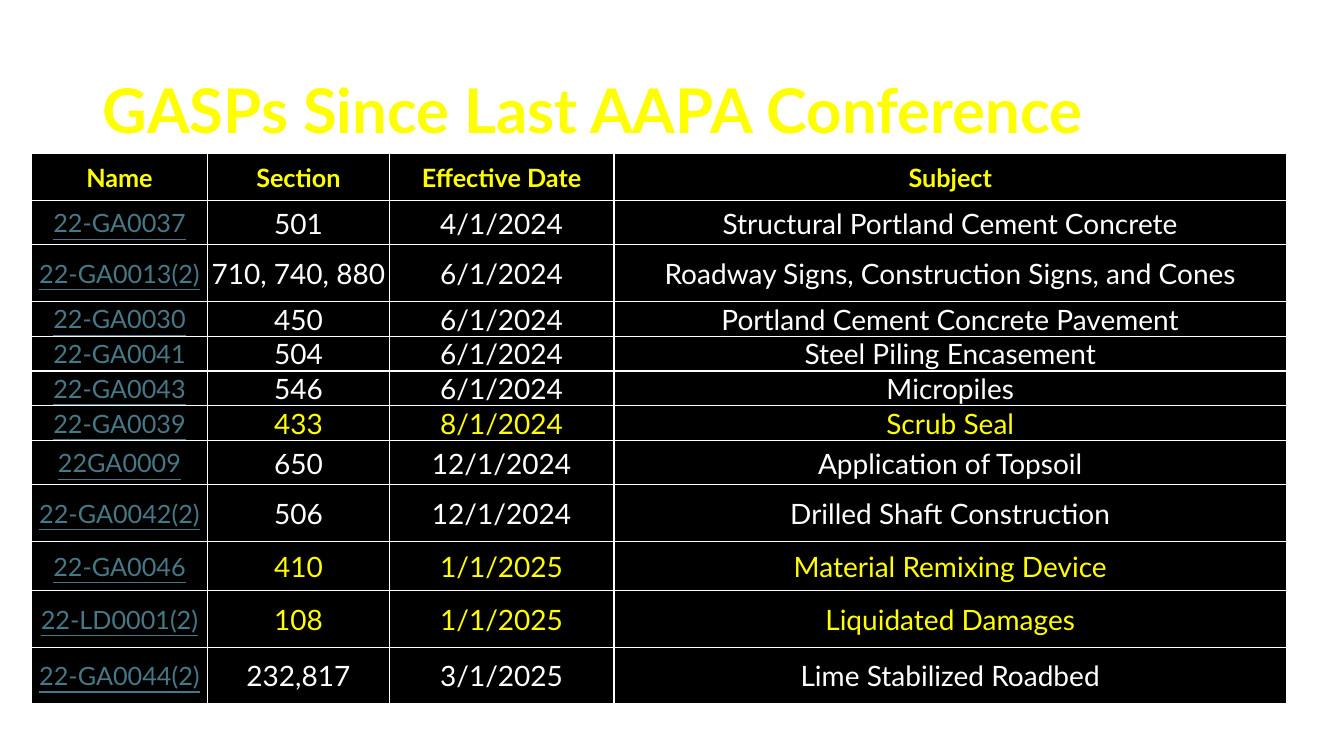
import pptx
import pptx.dml.color
import pptx.enum.text
import pptx.oxml
import pptx.oxml.ns
import pptx.util

RGBColor = pptx.dml.color.RGBColor
YELLOW = RGBColor(0xFF, 0xFF, 0x00)
WHITE = RGBColor(0xFF, 0xFF, 0xFF)
BLACK = RGBColor(0x00, 0x00, 0x00)
LINK_BLUE = RGBColor(0x46, 0x78, 0x86)

FONT = "Lato"
TITLE = "GASPs Since Last AAPA Conference"
HEADINGS = ("Name", "Section", "Effective Date", "Subject")
PROVISIONS = [
    ("22-GA0037", "501", "4/1/2024", "Structural Portland Cement Concrete"),
    ("22-GA0013(2)", "710, 740, 880", "6/1/2024", "Roadway Signs, Construction Signs, and Cones"),
    ("22-GA0030", "450", "6/1/2024", "Portland Cement Concrete Pavement"),
    ("22-GA0041", "504", "6/1/2024", "Steel Piling Encasement"),
    ("22-GA0043", "546", "6/1/2024", "Micropiles"),
    ("22-GA0039", "433", "8/1/2024", "Scrub Seal"),
    ("22GA0009", "650", "12/1/2024", "Application of Topsoil"),
    ("22-GA0042(2)", "506", "12/1/2024", "Drilled Shaft Construction"),
    ("22-GA0046", "410", "1/1/2025", "Material Remixing Device"),
    ("22-LD0001(2)", "108", "1/1/2025", "Liquidated Damages"),
    ("22-GA0044(2)", "232,817", "3/1/2025", "Lime Stabilized Roadbed"),
]
HIGHLIGHTED = {"22-GA0039", "22-GA0046", "22-LD0001(2)"}

# Lengths in px, 100 to the inch
PX = 9144
SLIDE_SIZE = (1333, 750)
TITLE_BOX = (92, 40, 1150, 145)
TABLE_CORNER = (31, 152)
COLUMN_WIDTHS = (175, 180, 223, 667)
ROW_HEIGHTS = (47, 44, 56, 34, 34, 34, 34, 44, 56, 49, 56, 56)


def px(length):
    return pptx.util.Emu(length * PX)


def add_run(para, text, size, color, bold=False, underline=False):
    span = para.add_run()
    span.text = text
    span.font.name = FONT
    span.font.size = pptx.util.Pt(size)
    span.font.color.rgb = color
    span.font.bold = bold
    span.font.underline = underline


def add_borders(cell):
    """Draw a 1 pt white line on all four sides; call before filling the cell."""
    properties = cell._tc.get_or_add_tcPr()
    for side in ("lnL", "lnR", "lnT", "lnB"):
        properties.append(pptx.oxml.parse_xml(
            f'<a:{side} {pptx.oxml.ns.nsdecls("a")} w="{pptx.util.Pt(1)}">'
            f'<a:solidFill><a:srgbClr val="{WHITE}"/></a:solidFill></a:{side}>'))


def text_style(row, column, name):
    if row == 0:
        return {"size": 18, "color": YELLOW, "bold": True}
    if column == 0:
        return {"size": 18, "color": LINK_BLUE, "underline": True}
    return {"size": 20, "color": YELLOW if name in HIGHLIGHTED else WHITE}


def add_title(page):
    box = page.shapes.title
    box.left, box.top, box.width, box.height = map(px, TITLE_BOX)
    frame = box.text_frame
    frame.word_wrap = True
    frame.auto_size = pptx.enum.text.MSO_AUTO_SIZE.NONE
    frame.vertical_anchor = pptx.enum.text.MSO_ANCHOR.MIDDLE
    para = frame.paragraphs[0]
    para.alignment = pptx.enum.text.PP_ALIGN.LEFT
    para.line_spacing = 0.9
    add_run(para, TITLE, 44, YELLOW, bold=True)


def add_provisions_table(page):
    rows = [HEADINGS] + PROVISIONS
    size = (sum(COLUMN_WIDTHS), sum(ROW_HEIGHTS))
    table = page.shapes.add_table(
        len(rows), len(HEADINGS), *map(px, TABLE_CORNER + size)).table
    table.horz_banding = False
    for column, width in zip(table.columns, COLUMN_WIDTHS):
        column.width = px(width)
    for row, height in zip(table.rows, ROW_HEIGHTS):
        row.height = px(height)

    for r, values in enumerate(rows):
        for c, value in enumerate(values):
            cell = table.cell(r, c)
            add_borders(cell)
            cell.fill.solid()
            cell.fill.fore_color.rgb = BLACK
            cell.margin_left = cell.margin_right = cell.margin_top = px(1)
            cell.margin_bottom = 0
            cell.vertical_anchor = pptx.enum.text.MSO_ANCHOR.MIDDLE
            para = cell.text_frame.paragraphs[0]
            para.alignment = pptx.enum.text.PP_ALIGN.CENTER
            add_run(para, value, **text_style(r, c, values[0]))


def main():
    deck = pptx.Presentation()
    deck.slide_width, deck.slide_height = map(px, SLIDE_SIZE)
    page = deck.slides.add_slide(deck.slide_layouts.get_by_name("Title Only"))
    add_title(page)
    add_provisions_table(page)
    deck.save("out.pptx")


if __name__ == "__main__":
    main()
